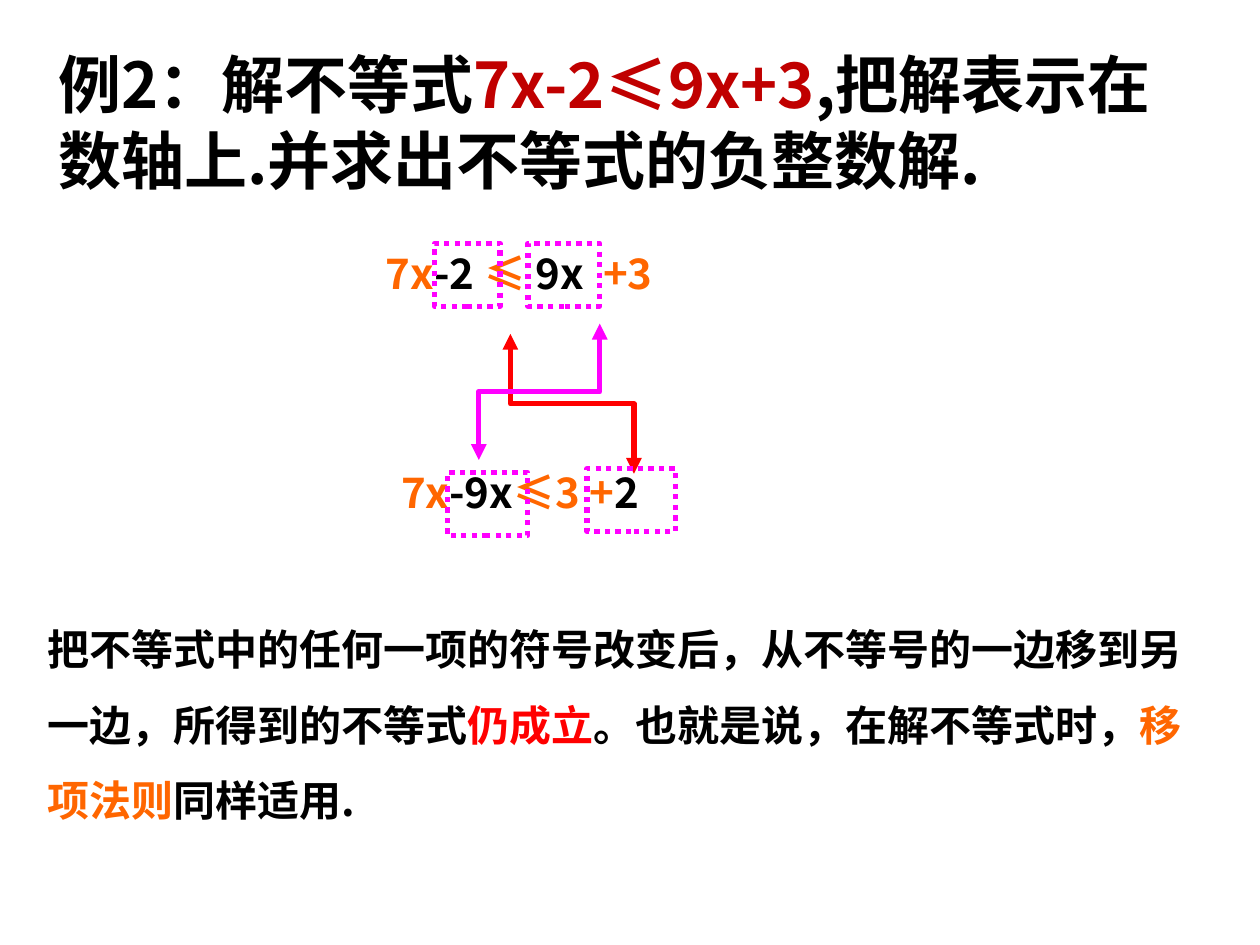
import pptx
import pptx.util
import pptx.dml.color
import pptx.enum.dml
import pptx.enum.shapes
import pptx.enum.text
import pptx.oxml
import pptx.oxml.ns

Pt = pptx.util.Pt
Align = pptx.enum.text.PP_ALIGN
Fit = pptx.enum.text.MSO_AUTO_SIZE
qn = pptx.oxml.ns.qn

INK = {"black": "000000", "orange": "FF6600", "red": "FF0000",
       "dark": "C00000", "pink": "FF00FF"}


class Board:
    """Holds the style and the current slide."""
    face = "Noto Sans CJK SC"
    weight = 3

    def __init__(self, deck):
        self.slide = deck.slides.add_slide(deck.slide_layouts[5])
        self.shapes = self.slide.shapes

    def color(self, name):
        return pptx.dml.color.RGBColor.from_string(INK[name])

    def fill(self, shape, parts, size, align, wrap=True, gap=None):
        frame = shape.text_frame
        frame.word_wrap = wrap
        frame.vertical_anchor = pptx.enum.text.MSO_ANCHOR.TOP
        frame.auto_size = Fit.SHAPE_TO_FIT_TEXT
        para = frame.paragraphs[0]
        para.alignment = align
        para.line_spacing = gap
        for text, ink in parts:
            run = para.add_run()
            run.text = text
            font = run.font
            font.size, font.bold, font.name = Pt(size), True, self.face
            font.color.rgb = self.color(ink)
            # East Asian face follows the Latin one
            asian = pptx.oxml.parse_xml(
                f'<a:ea {pptx.oxml.ns.nsdecls("a")} typeface="{self.face}"/>')
            font._element.find(qn("a:latin")).addnext(asian)

    def title(self, box, parts):
        shape = self.shapes.title
        shape.left, shape.top, shape.width, shape.height = map(Pt, box)
        self.fill(shape, parts, 36, Align.LEFT)

    def text(self, box, parts, align=Align.CENTER, **style):
        shape = self.shapes.add_textbox(*map(Pt, box))
        self.fill(shape, parts, 24, align, **style)

    def stroke(self, line, ink):
        line.width = Pt(self.weight)
        line.color.rgb = self.color(ink)

    def frame(self, *box):
        kind = pptx.enum.shapes.MSO_SHAPE.RECTANGLE
        shape = self.shapes.add_shape(kind, *map(Pt, box))
        shape.shadow.inherit = False
        shape.fill.background()
        self.stroke(shape.line, "pink")
        shape.line.dash_style = pptx.enum.dml.MSO_LINE.ROUND_DOT

    def bend(self, x1, y1, x2, y2, ink):
        """Elbow that leaves and arrives vertically: a turned level elbow."""
        midx, midy = (x1 + x2) / 2, (y1 + y2) / 2
        half, rise = (y2 - y1) / 2, abs(x2 - x1) / 2
        right = x2 > x1
        if right:
            half = -half  # runs right to left before the turn
        link = self.shapes.add_connector(
            pptx.enum.shapes.MSO_CONNECTOR.ELBOW,
            Pt(midx - half), Pt(midy - rise), Pt(midx + half), Pt(midy + rise))
        self.stroke(link.line, ink)
        props = link._element.spPr
        turn = 270 if right else 90
        props.find(qn("a:xfrm")).set("rot", str(turn * 60000))
        line = props.find(qn("a:ln"))
        for end in ("headEnd", "tailEnd"):
            line.append(pptx.oxml.parse_xml(
                f'<a:{end} {pptx.oxml.ns.nsdecls("a")} type="triangle"/>'))
        props.append(pptx.oxml.parse_xml(
            f'<a:effectLst {pptx.oxml.ns.nsdecls("a")}/>'))


def main():
    deck = pptx.Presentation()
    deck.slide_width, deck.slide_height = Pt(720), Pt(540)
    board = Board(deck)

    # Problem
    board.title((26, 22.4, 669.6, 94.3), [
        ("例2：解不等式", "black"), ("7x-2≤9x+3", "dark"),
        (",把解表示在   数轴上.并求出不等式的负整数解.", "black")])

    # Inequality before and after moving terms
    board.text((203.8, 138.2, 185.8, 36), [
        ("7x", "orange"), ("-2 ", "black"), ("≤ ", "orange"),
        ("9x  ", "black"), ("+3", "orange")])
    board.text((212.4, 262.8, 164.2, 36), [
        (" ", "orange"), ("7x", "orange"), ("-9x", "black"),
        ("≤3 +", "orange"), ("2", "black")], wrap=False)

    # Arrows between the moved terms
    board.bend(291.6, 190.8, 362.2, 270.7, "red")
    board.bend(342.7, 185, 273.6, 262.8, "pink")

    # Dotted frames around the moved terms
    for left, top, width in ((248.4, 139, 37.4), (301.7, 139, 41),
                             (255.6, 270, 46), (335.5, 267.8, 50.4)):
        board.frame(left, top, width, 36)

    # Rule
    board.text((20.2, 338.4, 680.4, 138.2), [
        ("把不等式中的任何一项的符号改变后，从不等号的一边移到另一边，"
         "所得到的不等式", "black"),
        ("仍成立", "red"), ("。也就是说，在解不等式时，", "black"),
        ("移项法则", "orange"), ("同样适用.", "black")],
        align=Align.LEFT, gap=1.5)

    deck.save("out.pptx")


if __name__ == "__main__":
    main()
